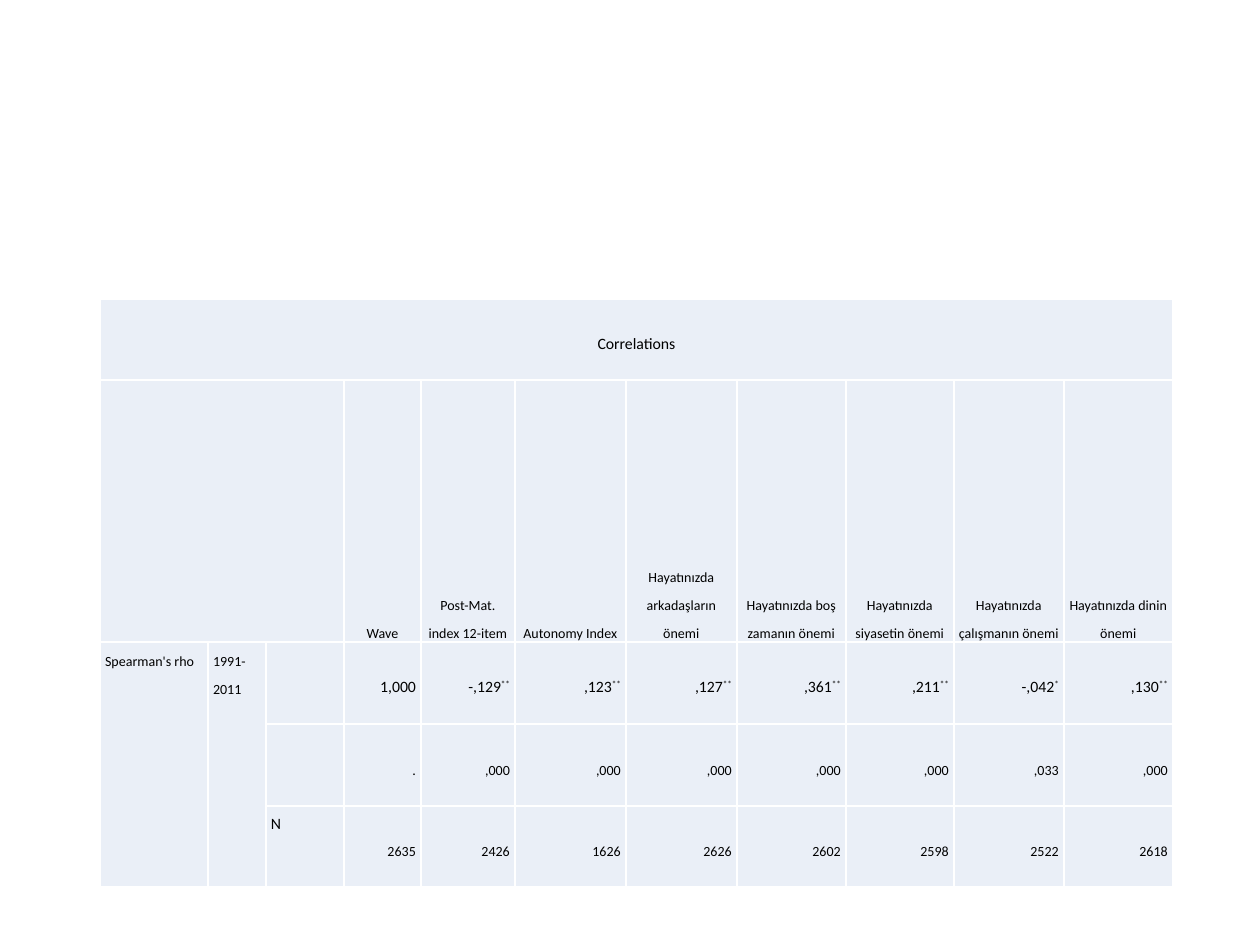
"""Build a slide with a Spearman correlation table."""
from dataclasses import dataclass

from lxml import etree
from pptx import Presentation, util as u
from pptx.dml.color import RGBColor
from pptx.enum import text
from pptx.oxml.ns import qn

SCALE = 914400 / 126


@dataclass(frozen=True)
class Theme:
    """Hold the colours, font and type sizes."""
    font: str = "Calibri"
    ink: str = "000000"
    fill: str = "EAEFF7"
    border: str = "FFFFFF"
    large: int = 9
    small: int = 8
    leading: int = 16


THEME = Theme()
COLUMNS = [108, 58, 78, 77, 94, 111, 111, 109, 108, 110, 109]
ROWS = [81, 262, 82, 82, 81]
LABEL_COLUMNS = 3
MERGES = [((0, 0), (0, 10)), ((1, 0), (1, 2)), ((2, 0), (4, 0)), ((2, 1), (4, 1))]

LABELS = [
    (2, 0, "Spearman's rho", THEME.small),
    (2, 1, "1991-2011", THEME.small),
    (4, 2, "N", THEME.large),
]
VARIABLES = [
    ("Wave", "1,000", "", ".", "2635"),
    ("Post-Mat. index 12-item", "-,129", "**", ",000", "2426"),
    ("Autonomy Index", ",123", "**", ",000", "1626"),
    ("Hayatınızda arkadaşların önemi", ",127", "**", ",000", "2626"),
    ("Hayatınızda boş zamanın önemi", ",361", "**", ",000", "2602"),
    ("Hayatınızda siyasetin önemi", ",211", "**", ",000", "2598"),
    ("Hayatınızda çalışmanın önemi", "-,042", "*", ",033", "2522"),
    ("Hayatınızda dinin önemi", ",130", "**", ",000", "2618"),
]

TITLE = (text.PP_ALIGN.CENTER, text.MSO_ANCHOR.MIDDLE)
HEADING = (text.PP_ALIGN.CENTER, text.MSO_ANCHOR.BOTTOM)
LABEL = (text.PP_ALIGN.LEFT, text.MSO_ANCHOR.TOP)
VALUE = (text.PP_ALIGN.RIGHT, text.MSO_ANCHOR.MIDDLE)


def px(length):
    """Turn pixels into EMU."""
    return u.Emu(round(length * SCALE))


def apply(target, values):
    """Set each named attribute on the target."""
    for name, value in values.items():
        setattr(target, name, value)


def style_cell(cell):
    """Give a cell its borders, fill and zero margins."""
    properties = cell._tc.get_or_add_tcPr()
    for side in ("a:lnL", "a:lnR", "a:lnT", "a:lnB"):
        line = etree.SubElement(properties, qn(side), w=str(u.Pt(1)))
        paint = etree.SubElement(line, qn("a:solidFill"))
        etree.SubElement(paint, qn("a:srgbClr"), val=THEME.border)
    cell.fill.solid()
    cell.fill.fore_color.rgb = RGBColor.from_string(THEME.fill)
    apply(cell, {f"margin_{side}": 0 for side in ("left", "right", "top", "bottom")})


def add_span(para, wording, size, raised=False):
    """Add a run of text, raised for significance marks."""
    span = para.add_run()
    span.text = wording
    apply(span.font, {"name": THEME.font, "size": u.Pt(size), "bold": False})
    span.font.color.rgb = RGBColor.from_string(THEME.ink)
    if raised:
        span._r.get_or_add_rPr().set("baseline", "30000")


def write_cell(cell, wording, size, placement, mark=""):
    """Write a cell's text with an optional significance mark."""
    alignment, cell.vertical_anchor = placement
    para = cell.text_frame.paragraphs[0]
    apply(para, {"alignment": alignment, "line_spacing": u.Pt(THEME.leading)})
    for margin in ("marL", "marR"):
        para._p.get_or_add_pPr().set(margin, str(px(5)))
    add_span(para, wording, size)
    if mark:
        add_span(para, mark, size, raised=True)


def add_grid(page):
    """Add the empty styled table with its merged cells."""
    frame = page.shapes.add_table(
        len(ROWS), len(COLUMNS), px(100), px(299), px(sum(COLUMNS)), px(sum(ROWS)))
    table = frame.table
    apply(table, {"first_row": False, "horz_banding": False})
    for column, width in zip(table.columns, COLUMNS):
        column.width = px(width)
    for row, height in zip(table.rows, ROWS):
        row.height = px(height)
    for cell in table.iter_cells():
        style_cell(cell)
    for first, last in MERGES:
        table.cell(*first).merge(table.cell(*last))
    return table


def fill_grid(table):
    """Write the title, labels, headings and statistics."""
    write_cell(table.cell(0, 0), "Correlations", THEME.large, TITLE)
    for row, column, wording, size in LABELS:
        write_cell(table.cell(row, column), wording, size, LABEL)
    for column, variable in enumerate(VARIABLES, LABEL_COLUMNS):
        heading, rho, mark, significance, count = variable
        write_cell(table.cell(1, column), heading, THEME.small, HEADING)
        write_cell(table.cell(2, column), rho, THEME.large, VALUE, mark)
        write_cell(table.cell(3, column), significance, THEME.small, VALUE)
        write_cell(table.cell(4, column), count, THEME.small, VALUE)


def main():
    """Build and save the deck."""
    deck = Presentation()
    apply(deck, {"slide_width": px(1260), "slide_height": px(945)})
    page = deck.slides.add_slide(deck.slide_layouts[6])
    fill_grid(add_grid(page))
    deck.save("out.pptx")


if __name__ == "__main__":
    main()
